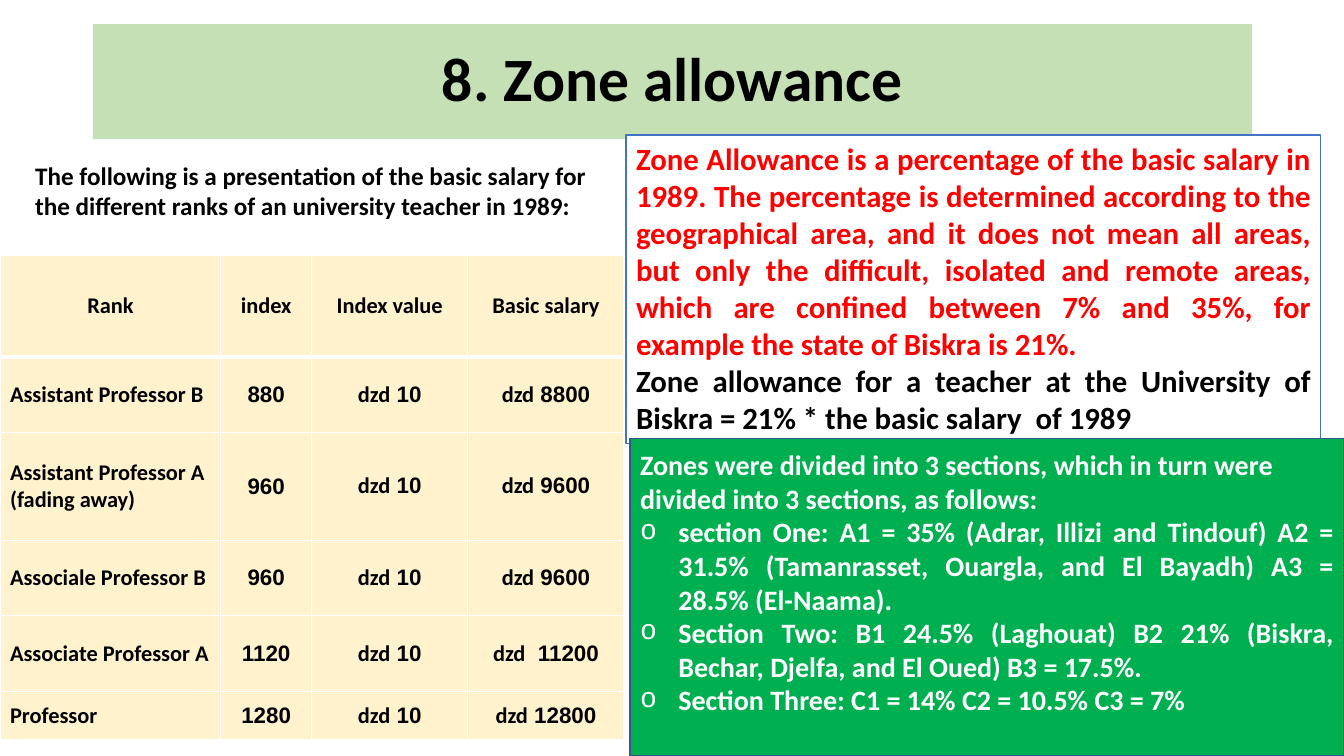
from pptx import Presentation
from pptx.util import Inches, Pt
from pptx.dml.color import RGBColor
from pptx.enum.shapes import MSO_SHAPE
from pptx.enum.text import MSO_ANCHOR as ANCHOR, PP_ALIGN as ALIGN
from pptx.oxml import parse_xml
from pptx.oxml.ns import nsdecls


def color(value):
    return RGBColor.from_string(value)


def write(p, text, size=18, fill="000000", align=ALIGN.LEFT, rtl=False, bullet=False, indent=0):
    p.alignment = align
    pPr = p._p.get_or_add_pPr()
    if rtl:
        pPr.set("rtl", "1")
    if indent:
        pPr.set("marL", str(Inches(indent)))
        pPr.set("indent", str(-Inches(indent)))
    if bullet:
        pPr.append(parse_xml(f'<a:buFont {nsdecls("a")} typeface="Courier New"/>'))
        pPr.append(parse_xml(f'<a:buChar {nsdecls("a")} char="o"/>'))
    r = p.add_run()
    r.text = text
    r.font.name = "Calibri"
    r.font.size = Pt(size)
    r.font.bold = True
    r.font.color.rgb = color(fill)
    r._r.get_or_add_rPr().append(parse_xml(f'<a:cs {nsdecls("a")} typeface="Arial"/>'))


prs = Presentation()
prs.slide_width, prs.slide_height = Inches(13.33), Inches(7.5)
s = prs.slides.add_slide(prs.slide_layouts[5])

title = s.shapes.title
title.left, title.top = Inches(0.92), Inches(0.24)
title.width, title.height = Inches(11.5), Inches(1.14)
title.fill.solid()
title.fill.fore_color.rgb = color("C5E0B4")
title.text_frame.vertical_anchor = ANCHOR.MIDDLE
p = title.text_frame.paragraphs[0]
p.line_spacing = 0.9
write(p, "8. Zone allowance", size=44, align=ALIGN.CENTER, indent=0.56)

intro = s.shapes.add_textbox(Inches(0.25), Inches(1.54), Inches(5.71), Inches(1.31))
intro.text_frame.word_wrap = True
write(intro.text_frame.paragraphs[0],
      "The following is a presentation of the basic salary for the different ranks "
      "of an university teacher in 1989:")

rows = [
    ("Rank", "index", "Index value", "Basic salary"),
    ("Assistant Professor B", "880", "10 dzd", "8800 dzd"),
    ("Assistant Professor A (fading away)", "960", "10 dzd", "9600 dzd"),
    ("Associale Professor B", "960", "10 dzd", "9600 dzd"),
    ("Associate Professor A", "1120", "10 dzd", "11200  dzd"),
    ("Professor", "1280", "10 dzd", "12800 dzd"),
]
widths = [2.19, 0.9, 1.55, 1.55]
heights = [1.01, 0.75, 1.07, 0.75, 0.75, 0.48]
table = s.shapes.add_table(len(rows), len(widths), 0, Inches(2.53),
                           Inches(sum(widths)), Inches(sum(heights))).table
for column, width in zip(table.columns, widths):
    column.width = Inches(width)
for i, (row, height) in enumerate(zip(rows, heights)):
    table.rows[i].height = Inches(height)
    for j, text in enumerate(row):
        cell = table.cell(i, j)
        cell.vertical_anchor = ANCHOR.MIDDLE
        tcPr = cell._tc.get_or_add_tcPr()
        for side in "LRTB":
            thick = (i, side) in [(0, "B"), (1, "T")]
            tcPr.append(parse_xml(
                f'<a:ln{side} {nsdecls("a")} w="{Pt(3 if thick else 1)}"><a:solidFill>'
                f'<a:srgbClr val="FFFFFF"/></a:solidFill></a:ln{side}>'))
        cell.fill.solid()
        cell.fill.fore_color.rgb = color("FFF2CC")
        centred = i == 0 or j > 0
        write(cell.text_frame.paragraphs[0], text, size=16, rtl=centred,
              align=ALIGN.CENTER if centred else ALIGN.LEFT)

definition = [
    ("Zone Allowance is a percentage of the basic salary in 1989. The percentage is determined "
     "according to the geographical area, and it does not mean all areas, but only the difficult, "
     "isolated and remote areas, which are confined between 7% and 35%, for example the state of "
     "Biskra is 21%.", dict(size=22, fill="FF0000", align=ALIGN.JUSTIFY)),
    ("Zone allowance for a teacher at the University of Biskra = 21% * the basic salary  of 1989",
     dict(size=22, align=ALIGN.JUSTIFY)),
]
item = dict(size=20, fill="FFFFFF", align=ALIGN.JUSTIFY, bullet=True, indent=0.38)
zones = [
    ("Zones were divided into 3 sections, which in turn were divided into 3 sections, as follows:",
     dict(size=20, fill="FFFFFF")),
    ("section One: A1 = 35% (Adrar, Illizi and Tindouf) A2 = 31.5% (Tamanrasset, Ouargla, "
     "and El Bayadh) A3 = 28.5% (El-Naama).", item),
    ("Section Two: B1 24.5% (Laghouat) B2 21% (Biskra, Bechar, Djelfa, and El Oued) B3 = 17.5%.",
     item),
    ("Section Three: C1 = 14% C2 = 10.5% C3 = 7%", item),
]
boxes = [
    (6.21, 1.34, 6.89, 3.06, "FFFFFF", "4472C4", ANCHOR.TOP, 0.05, definition),
    (6.25, 4.35, 7.08, 3.15, "00B050", "325491", ANCHOR.MIDDLE, 0.35, zones),
]
for x, y, w, h, fill, line, anchor, bottom, paragraphs in boxes:
    sp = s.shapes.add_shape(MSO_SHAPE.RECTANGLE, Inches(x), Inches(y), Inches(w), Inches(h))
    sp.shadow.inherit = False
    sp.fill.solid()
    sp.fill.fore_color.rgb = color(fill)
    sp.line.color.rgb = color(line)
    sp.line.width = Pt(1)
    tf = sp.text_frame
    tf.word_wrap = True
    tf.vertical_anchor = anchor
    tf.margin_bottom = Inches(bottom)
    for k, (text, style) in enumerate(paragraphs):
        p = tf.add_paragraph() if k else tf.paragraphs[0]
        write(p, text, **style)

prs.save("out.pptx")
